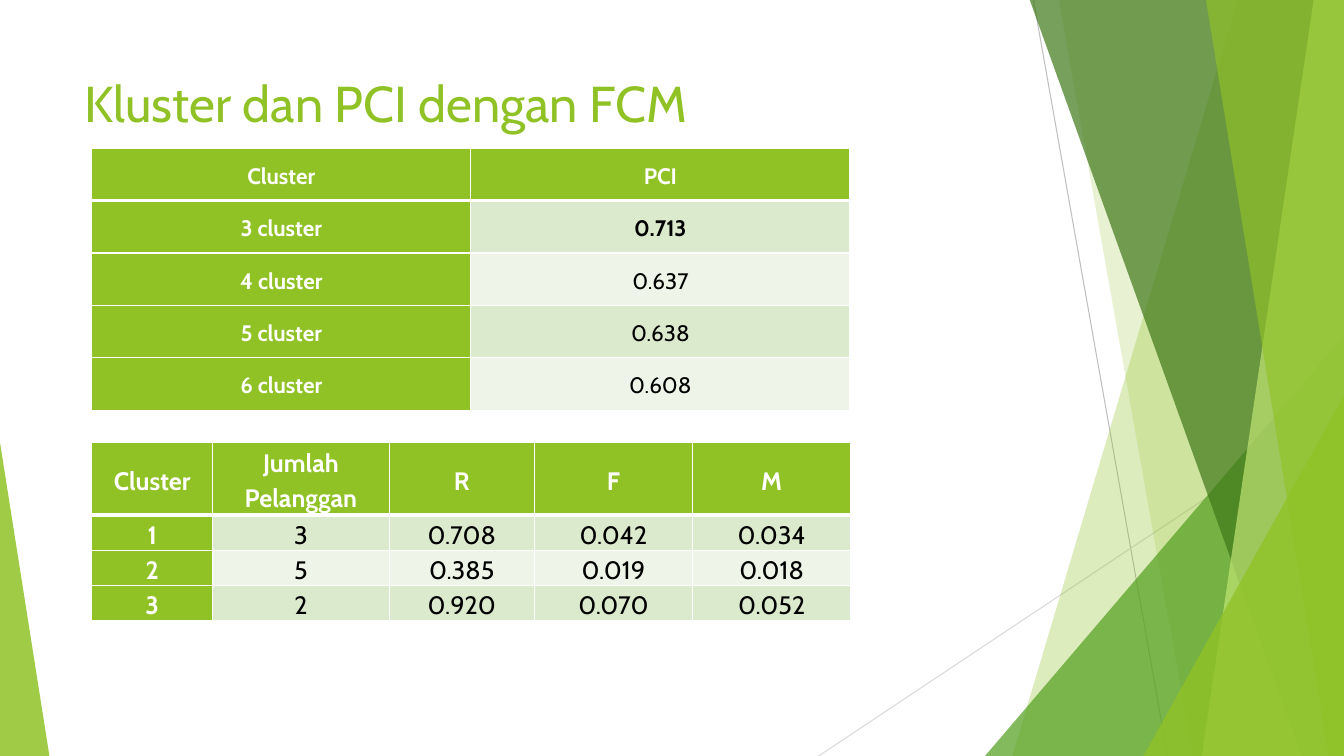
from dataclasses import dataclass

from lxml import etree
from pptx import Presentation
from pptx import util as u
from pptx.dml.color import RGBColor
from pptx.enum import shapes, text
from pptx.oxml import ns

COLORS = {
    "white": "FFFFFF",
    "black": "000000",
    "green": "90C226",
    "leaf": "54A021",
    "forest": "3F7819",
    "lime": "C0E474",
    "band_dark": "DBE9CD",
    "band_light": "EEF4E8",
    "gray": "BFBFBF",
    "pale_gray": "D9D9D9",
}
FONT = "Cabin"
WIDTH, HEIGHT = 13.33, 7.5


@dataclass
class Ray:
    start: tuple[float, float]
    end: tuple[float, float]
    color: str


@dataclass
class Facet:
    points: list[tuple[float, float]]
    color: str
    alpha: int


@dataclass
class Wedge:
    left: float
    top: float
    width: float
    peak: float
    color: str
    alpha: int


@dataclass
class Grid:
    top: float
    widths: list[float]
    heights: list[float]
    size: int
    rows: list[list[str]]
    bold: str = ""


def right_facet(top_x: float, bottom_x: float, color: str, alpha: int) -> Facet:
    points = [(top_x, -0.01), (WIDTH, -0.01), (WIDTH, HEIGHT), (bottom_x, HEIGHT)]
    return Facet(points, color, alpha)


RAYS = [
    Ray((10.25, 0), (11.58, HEIGHT), "gray"),
    Ray((WIDTH, 4.03), (8.12, HEIGHT), "pale_gray"),
]
DECOR = [
    right_facet(12.28, 10.04, "green", 30),
    right_facet(10.5, 11.83, "green", 20),
    Wedge(9.77, 3.33, 3.56, 1, "leaf", 72),
    right_facet(10.21, 12.91, "forest", 70),
    right_facet(13.03, 11.92, "lime", 70),
    right_facet(11.96, 13.18, "green", 65),
    Wedge(11.34, 3.93, 1.99, 1, "green", 80),
    Wedge(0, 4.39, 0.49, 0, "green", 85),
]
GRIDS = [
    Grid(1.47, [3.76] * 2, [0.52] * 5, 16, [
        ["Cluster", "PCI"],
        ["3 cluster", "0.713"],
        ["4 cluster", "0.637"],
        ["5 cluster", "0.638"],
        ["6 cluster", "0.608"],
    ], bold="0.713"),
    Grid(4.39, [1.2, 1.75, 1.44, 1.57, 1.57], [0.72] + [0.35] * 3, 18, [
        ["Cluster", "Jumlah Pelanggan", "R", "F", "M"],
        ["1", "3", "0.708", "0.042", "0.034"],
        ["2", "5", "0.385", "0.019", "0.018"],
        ["3", "2", "0.920", "0.070", "0.052"],
    ]),
]


def rgb(name: str) -> RGBColor:
    return RGBColor.from_string(COLORS[name])


def add_run(p, words: str, size: int, color: str, bold: bool = False) -> None:
    r = p.add_run()
    r.text = words
    r.font.name = FONT
    r.font.size = u.Pt(size)
    r.font.bold = bold
    r.font.color.rgb = rgb(color)


def draw_ray(s, ray: Ray) -> None:
    ends = [u.Inches(v) for v in (*ray.start, *ray.end)]
    cn = s.shapes.add_connector(shapes.MSO_CONNECTOR.STRAIGHT, *ends)
    cn.line.color.rgb = rgb(ray.color)
    cn.line.width = u.Pt(0.75)
    etree.SubElement(cn._element.spPr, ns.qn("a:effectLst"))


def draw_decor(s, item: Facet | Wedge) -> None:
    if isinstance(item, Facet):
        first, *rest = [(u.Inches(x), u.Inches(y)) for x, y in item.points]
        builder = s.shapes.build_freeform(*first)
        builder.add_line_segments(rest, close=True)
        sp = builder.convert_to_shape()
    else:
        box = (item.left, item.top, item.width, HEIGHT - item.top)
        sp = s.shapes.add_shape(
            shapes.MSO_SHAPE.ISOSCELES_TRIANGLE, *[u.Inches(v) for v in box])
        sp.adjustments[0] = item.peak
    sp.shadow.inherit = False
    sp.line.fill.background()
    sp.fill.solid()
    sp.fill.fore_color.rgb = rgb(item.color)
    clr = sp._element.spPr.find(".//" + ns.qn("a:srgbClr"))
    etree.SubElement(clr, ns.qn("a:alpha"), val=str(item.alpha * 1000))


def draw_title(s) -> None:
    box = [u.Inches(v) for v in (0.74, 0.67, 9.4, 1.44)]
    tf = s.shapes.add_textbox(*box).text_frame
    tf.word_wrap = True
    add_run(tf.paragraphs[0], "Kluster dan PCI dengan FCM", 36, "green")


def set_borders(cell, row: int) -> None:
    tcPr = cell._tc.get_or_add_tcPr()
    points = {"lnL": 1, "lnR": 1, "lnT": 3 if row == 1 else 1, "lnB": 3 if row == 0 else 1}
    for side, width in points.items():
        ln = etree.SubElement(tcPr, ns.qn(f"a:{side}"), w=str(u.Pt(width)))
        fill = etree.SubElement(ln, ns.qn("a:solidFill"))
        etree.SubElement(fill, ns.qn("a:srgbClr"), val=COLORS["white"])


def draw_grid(s, grid: Grid) -> None:
    box = (0.91, grid.top, sum(grid.widths), sum(grid.heights))
    tbl = s.shapes.add_table(
        len(grid.rows), len(grid.widths), *[u.Inches(v) for v in box]).table
    for column, width in zip(tbl.columns, grid.widths):
        column.width = u.Inches(width)
    for row, height in zip(tbl.rows, grid.heights):
        row.height = u.Inches(height)
    for i, values in enumerate(grid.rows):
        for j, value in enumerate(values):
            header = i == 0 or j == 0
            band = "band_dark" if i % 2 else "band_light"
            cell = tbl.cell(i, j)
            set_borders(cell, i)
            cell.fill.solid()
            cell.fill.fore_color.rgb = rgb("green" if header else band)
            cell.vertical_anchor = text.MSO_ANCHOR.MIDDLE
            cell.margin_left = cell.margin_right = u.Inches(0.07)
            cell.margin_top = cell.margin_bottom = 0
            p = cell.text_frame.paragraphs[0]
            p.alignment = text.PP_ALIGN.CENTER
            p.line_spacing = 1.15
            add_run(p, value, grid.size, "white" if header else "black",
                    header or value == grid.bold)


def main() -> None:
    prs = Presentation()
    prs.slide_width, prs.slide_height = u.Inches(WIDTH), u.Inches(HEIGHT)
    s = prs.slides.add_slide(prs.slide_layouts[6])
    for ray in RAYS:
        draw_ray(s, ray)
    for item in DECOR:
        draw_decor(s, item)
    draw_title(s)
    for grid in GRIDS:
        draw_grid(s, grid)
    prs.save("out.pptx")


if __name__ == "__main__":
    main()
